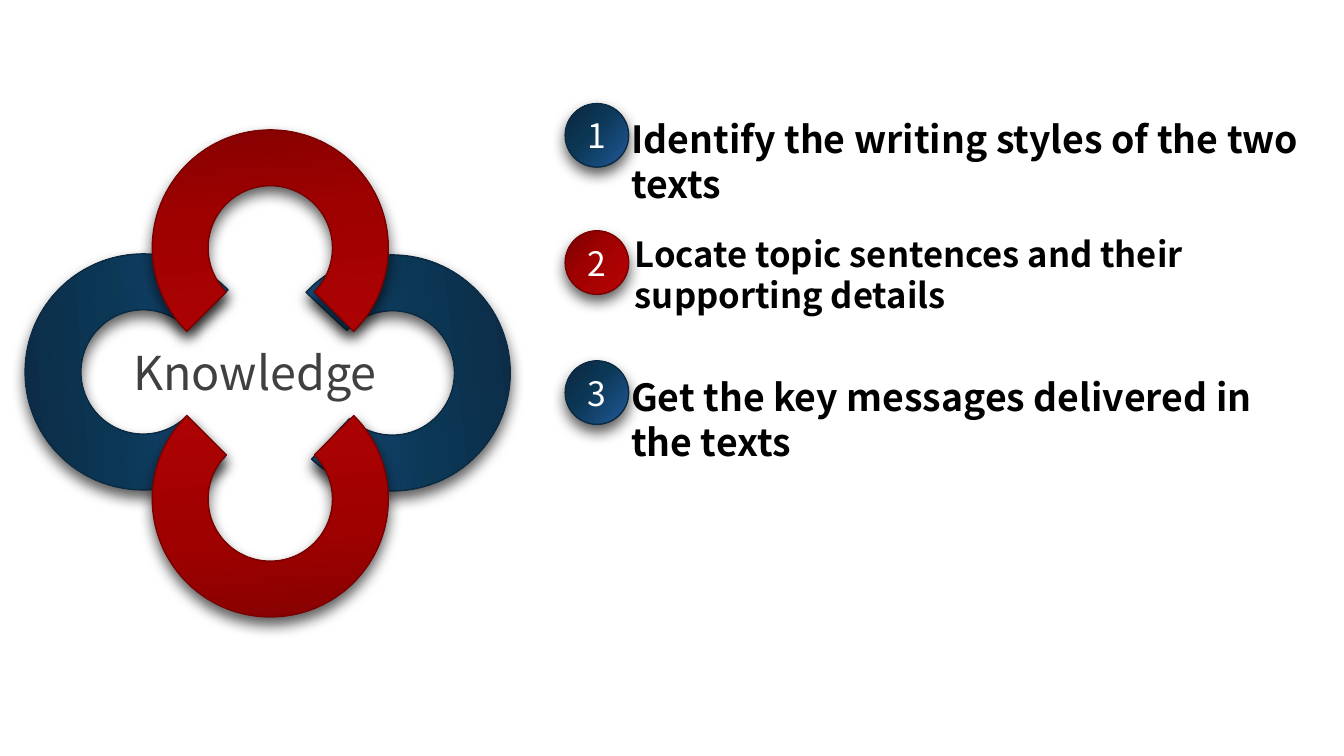
from itertools import pairwise
from math import cos, radians, sin

from lxml.etree import SubElement
from pptx import Presentation
from pptx.dml.color import RGBColor
from pptx.enum.shapes import MSO_SHAPE
from pptx.enum.text import MSO_ANCHOR, MSO_AUTO_SIZE, PP_ALIGN
from pptx.oxml.ns import qn
from pptx.util import Inches, Pt

WIDTH, HEIGHT = Inches(13.33), Inches(7.5)
FONT = "Noto Sans CJK SC"

WHITE = RGBColor(0xFF, 0xFF, 0xFF)
BLACK = RGBColor(0x00, 0x00, 0x00)
GREY = RGBColor(0x40, 0x40, 0x40)
NAVY_EDGE = RGBColor(0x0C, 0x2A, 0x42)
RED_EDGE = RGBColor(0x78, 0x02, 0x02)

# Each scheme: gradient colours from light to dark, then the outline
NAVY = ((RGBColor(0x1D, 0x52, 0x8B), RGBColor(0x0B, 0x37, 0x54),
         RGBColor(0x0D, 0x24, 0x3F)), NAVY_EDGE)
RED = ((RGBColor(0xB3, 0x03, 0x04), RGBColor(0x9F, 0x01, 0x00),
        RED_EDGE), RED_EDGE)
STOPS = (12, 59, 100)

# Knot of four rings: centre in percent, rotation, scheme
RINGS = [
    (10.65, 49.2, 316, NAVY),
    (29.18, 49.33, 133.1, NAVY),
    (20.11, 32.8, 45, RED),
    (20.11, 66, 225, RED),
]
CURVE = 0.5523  # handle length of a quarter circle, as a share of the radius

# Goals: text, size, scheme, badge top, then left, top, width, height in percent
GOALS = [
    ("Identify the writing styles of the two texts", 26.7, NAVY, 13.7,
     (46.22, 14.67, 53.78, 8.93)),
    ("Locate topic sentences and their supporting details", 24.7, RED, 30.53,
     (46.5, 30.13, 51.69, 11.6)),
    ("Get the key messages delivered in the texts", 26.7, NAVY, 47.73,
     (46.22, 48.8, 51.91, 15.73)),
]


def across(percent):
    return round(WIDTH * percent / 100)


def down(percent):
    return round(HEIGHT * percent / 100)


def add_color(parent, color, alpha=None):
    node = SubElement(parent, qn("a:srgbClr"), val=str(color))
    if alpha is not None:
        SubElement(node, qn("a:alpha"), val=str(alpha * 1000))


def style_glossy(shape, scheme):
    """Three-stop gradient, thin outline and soft shadow below."""
    colors, edge = scheme
    shape.fill.gradient()
    shape.line.color.rgb = edge
    shape.line.width = Pt(1)
    shape.shadow.inherit = False
    properties = shape.fill._xPr

    gradient = properties.find(qn("a:gradFill"))
    gradient.set("rotWithShape", "1")
    for child in list(gradient):
        gradient.remove(child)
    stops = SubElement(gradient, qn("a:gsLst"))
    for position, color in zip(STOPS, colors):
        add_color(SubElement(stops, qn("a:gs"), pos=str(position * 1000)), color)
    SubElement(gradient, qn("a:lin"), ang=str(220 * 60000), scaled="0")

    shadow = SubElement(properties.find(qn("a:effectLst")), qn("a:outerShdw"),
                        blurRad=str(Pt(10)), dist=str(Pt(5)),
                        dir=str(90 * 60000), algn="t", rotWithShape="0")
    add_color(shadow, BLACK, alpha=63)


def bend(segment, start, end, center):
    """Turn a straight segment into a quarter circle around center."""
    handles = [
        [p + CURVE * (q - c) for p, q, c in zip(start, end, center)],
        [q + CURVE * (p - c) for p, q, c in zip(start, end, center)],
    ]
    curve = segment.makeelement(qn("a:cubicBezTo"))
    for x, y in (*handles, end):
        SubElement(curve, qn("a:pt"), x=str(round(x)), y=str(round(y)))
    segment.getparent().replace(segment, curve)


def add_ring(slide, center_x, center_y, rotation, scheme):
    """Three quarters of a ring, open at the lower right before rotation."""
    outer, inner = across(8.78), across(4.63)
    center = (outer, outer)

    def quarters(radius, angles):
        return [(round(outer + radius * cos(radians(a))),
                 round(outer + radius * sin(radians(a)))) for a in angles]

    outline = (quarters(outer, (90, 180, 270, 360))
               + quarters(inner, (360, 270, 180, 90)))
    builder = slide.shapes.build_freeform(*outline[0], scale=1.0)
    builder.add_line_segments(outline[1:], close=True)
    ring = builder.convert_to_shape(across(center_x) - outer, down(center_y) - outer)
    segments = list(ring._element.iter(qn("a:lnTo")))
    for index, (start, end) in enumerate(pairwise(outline)):
        if index != 3:  # the fourth segment is the straight cut
            bend(segments[index], start, end, center)
    ring.rotation = rotation
    style_glossy(ring, scheme)


def write(shape, text, size, color, bold=False):
    frame = shape.text_frame
    frame.text = text
    paragraph = frame.paragraphs[0]
    font = paragraph.font
    font.name, font.size, font.bold = FONT, Pt(size), bold
    font.color.rgb = color
    return frame, paragraph


def clear_margins(frame):
    frame.margin_left = frame.margin_right = 0
    frame.margin_top = frame.margin_bottom = 0


def add_badge(slide, number, top, scheme):
    diameter = across(4.73)
    badge = slide.shapes.add_shape(MSO_SHAPE.OVAL, across(42.05), down(top),
                                   diameter, diameter)
    style_glossy(badge, scheme)
    frame, paragraph = write(badge, str(number), 24, WHITE)
    clear_margins(frame)
    frame.word_wrap = False
    frame.vertical_anchor = MSO_ANCHOR.MIDDLE
    paragraph.alignment = PP_ALIGN.CENTER


def add_textbox(slide, left, top, width, height):
    box = slide.shapes.add_textbox(across(left), down(top), across(width), down(height))
    box.text_frame.word_wrap = True
    return box


def add_hub_label(slide):
    label = add_textbox(slide, 8.33, 45.47, 21.98, 7.47)
    frame, _ = write(label, "Knowledge", 33.3, GREY)
    clear_margins(frame)
    frame.margin_left = across(1.57)
    frame.auto_size = MSO_AUTO_SIZE.SHAPE_TO_FIT_TEXT


def main():
    deck = Presentation()
    deck.slide_width, deck.slide_height = WIDTH, HEIGHT
    slide = deck.slides.add_slide(deck.slide_layouts[6])

    # Knowledge knot
    for ring in RINGS:
        add_ring(slide, *ring)
    add_hub_label(slide)

    # Numbered goals
    for number, (text, size, scheme, badge_top, place) in enumerate(GOALS, 1):
        add_badge(slide, number, badge_top, scheme)
        write(add_textbox(slide, *place), text, size, BLACK, bold=True)

    deck.save("out.pptx")


if __name__ == "__main__":
    main()
